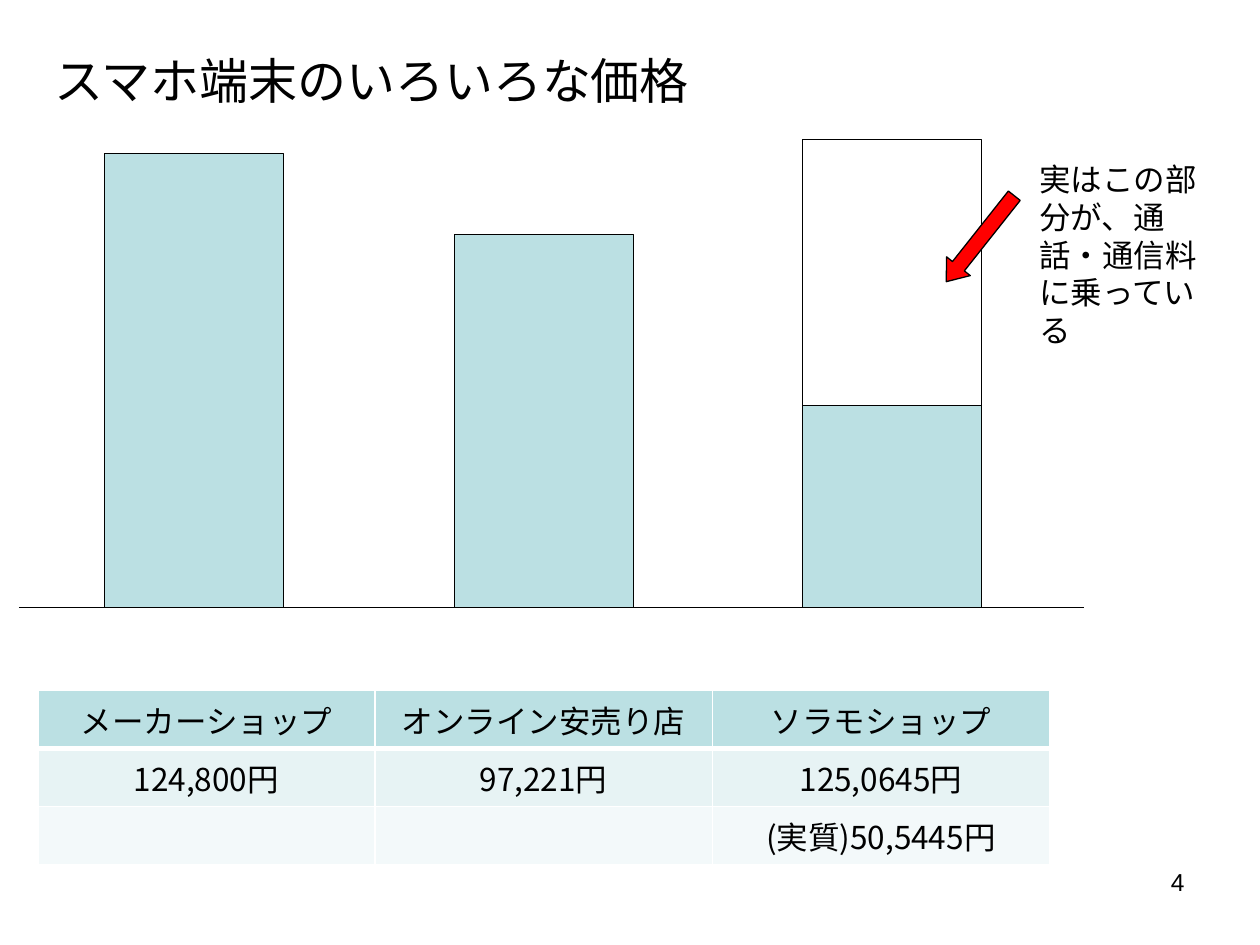
from pptx import Presentation
from pptx.dml.color import RGBColor
from pptx.enum.shapes import MSO_CONNECTOR, MSO_SHAPE
from pptx.enum.text import MSO_ANCHOR, PP_ALIGN
from pptx.oxml.xmlchemy import OxmlElement
from pptx.util import Inches, Pt

BASE = 4.82
BAR_W = 1.42
JP = "Noto Sans CJK JP"
TEAL = "BBE0E3"
ROW_FILLS = [TEAL, "E7F3F4", "F3F9FA"]
PRICES = [
    ["メーカーショップ", "オンライン安売り店", "ソラモショップ"],
    ["124,800円", "97,221円", "125,0645円"],
    ["", "", "(実質)50,5445円"],
]


def rgb(color):
    """Turn a hex string into a colour."""
    return RGBColor.from_string(color)


def write(tf, text, size, font=JP, align=PP_ALIGN.LEFT):
    """Put one formatted paragraph into a text frame."""
    tf.word_wrap = True
    p = tf.paragraphs[0]
    p.text = text
    p.alignment = align
    p.font.size = Pt(size)
    p.font.name = font
    p.font.color.rgb = rgb("000000")
    ea = OxmlElement("a:ea")
    ea.set("typeface", JP)
    p.font._element.append(ea)


def add_title(s, text):
    """Place the title and drop the unused subtitle."""
    title, subtitle = s.placeholders
    subtitle.element.getparent().remove(subtitle.element)
    title.left, title.top = Inches(0.33), Inches(0.3)
    title.width, title.height = Inches(8.5), Inches(0.67)
    title.text_frame.vertical_anchor = MSO_ANCHOR.MIDDLE
    write(title.text_frame, text, 28, "Arial")


def add_text(s, x, y, w, h, text, size, font=JP, align=PP_ALIGN.LEFT):
    """Add a wrapped text box."""
    box = s.shapes.add_textbox(Inches(x), Inches(y), Inches(w), Inches(h))
    write(box.text_frame, text, size, font, align)


def add_outlined(s, kind, x, y, w, h, fill=None):
    """Add a preset shape with a thin black outline."""
    sp = s.shapes.add_shape(kind, Inches(x), Inches(y), Inches(w), Inches(h))
    sp.shadow.inherit = False
    if fill:
        sp.fill.solid()
        sp.fill.fore_color.rgb = rgb(fill)
    else:
        sp.fill.background()
    sp.line.color.rgb = rgb("000000")
    sp.line.width = Pt(0.75)
    return sp


def add_bar(s, x, height, fill=None):
    """Stand a bar on the baseline."""
    add_outlined(s, MSO_SHAPE.RECTANGLE, x, BASE - height, BAR_W, height, fill)


def add_baseline(s):
    """Draw the line under the bars."""
    line = s.shapes.add_connector(
        MSO_CONNECTOR.STRAIGHT, Inches(0.15), Inches(BASE), Inches(8.6), Inches(BASE))
    line.line.color.rgb = rgb("000000")
    line.line.width = Pt(0.75)
    line._element.spPr.append(OxmlElement("a:effectLst"))


def add_arrow(s):
    """Point a red arrow at the hidden part of the price."""
    arrow = add_outlined(s, MSO_SHAPE.DOWN_ARROW, 7.66, 1.46, 0.24, 0.87, "FF0000")
    arrow.rotation = 38.4
    arrow.adjustments[0] = 0.5
    arrow.adjustments[1] = 0.65


def set_borders(cell, widths):
    """Give a cell white borders of the given widths."""
    tcPr = cell._tc.get_or_add_tcPr()
    for i, (side, width) in enumerate(widths.items()):
        ln = OxmlElement(f"a:{side}")
        ln.set("w", str(Pt(width)))
        fill = OxmlElement("a:solidFill")
        color = OxmlElement("a:srgbClr")
        color.set("val", "FFFFFF")
        fill.append(color)
        ln.append(fill)
        tcPr.insert(i, ln)


def add_price_table(s):
    """Add the table of shops and prices."""
    table = s.shapes.add_table(
        3, 3, Inches(0.3), Inches(5.48), Inches(8.03), Inches(1.38)).table
    for r, (row, fill) in enumerate(zip(PRICES, ROW_FILLS)):
        for c, text in enumerate(row):
            cell = table.cell(r, c)
            cell.fill.solid()
            cell.fill.fore_color.rgb = rgb(fill)
            write(cell.text_frame, text, 18, align=PP_ALIGN.CENTER)
            set_borders(cell, {"lnL": 1, "lnR": 1, "lnT": 3 if r == 1 else 1,
                               "lnB": 3 if r == 0 else 1})


def main():
    """Build the slide."""
    prs = Presentation()
    prs.slide_width, prs.slide_height = Inches(10), Inches(7.5)
    s = prs.slides.add_slide(prs.slide_layouts[0])
    add_title(s, "スマホ端末のいろいろな価格")
    add_text(s, 7.17, 6.83, 2.33, 0.52, "4", 14, "Arial", PP_ALIGN.RIGHT)
    for x, height, fill in [(0.83, 3.6, TEAL), (6.37, 1.6, TEAL),
                            (6.37, 3.71, None), (3.61, 2.96, TEAL)]:
        add_bar(s, x, height, fill)
    add_price_table(s)
    add_baseline(s)
    add_arrow(s)
    add_text(s, 8.15, 1.22, 1.63, 1.62, "実はこの部分が、通話・通信料に乗っている", 18)
    prs.save("out.pptx")


if __name__ == "__main__":
    main()
